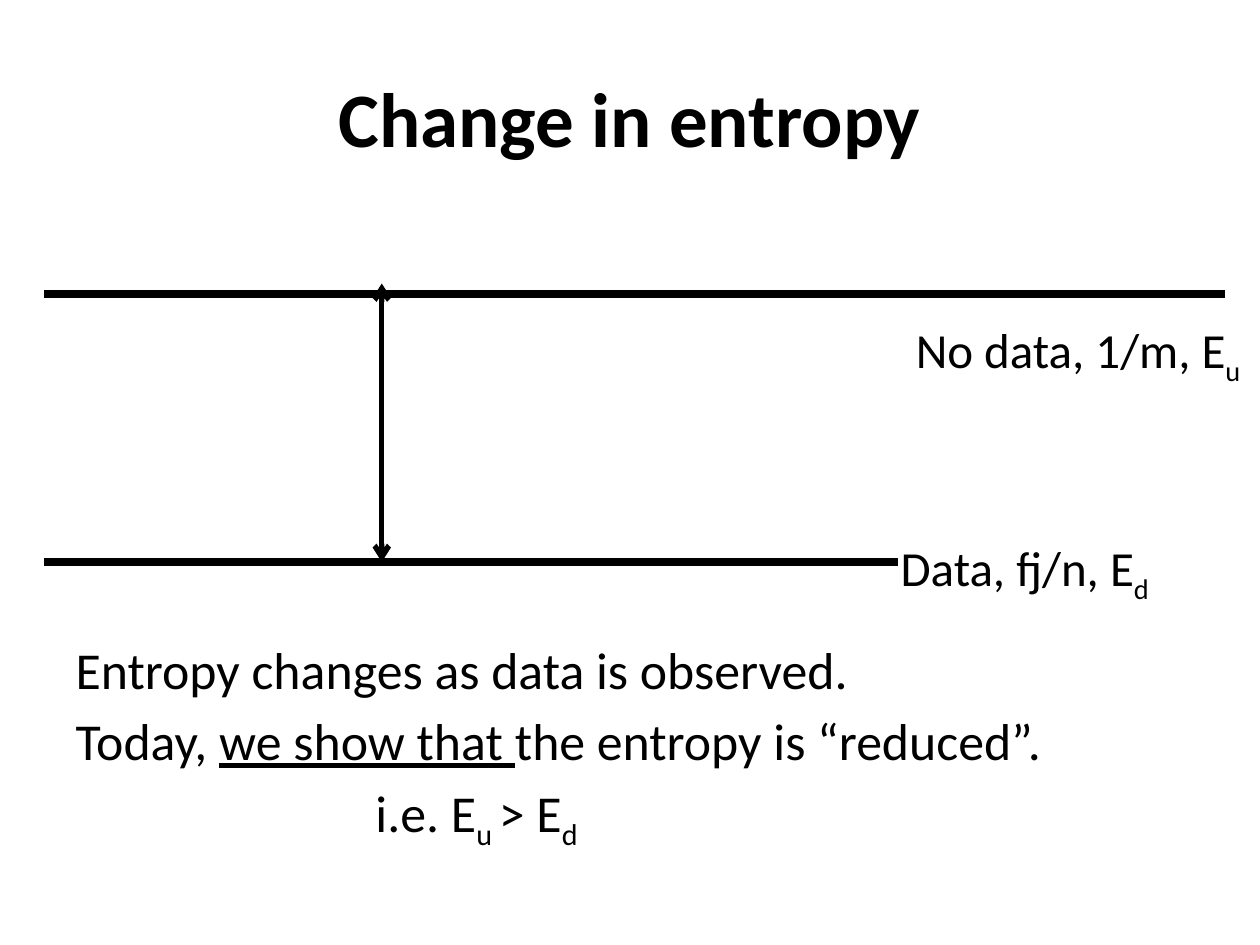
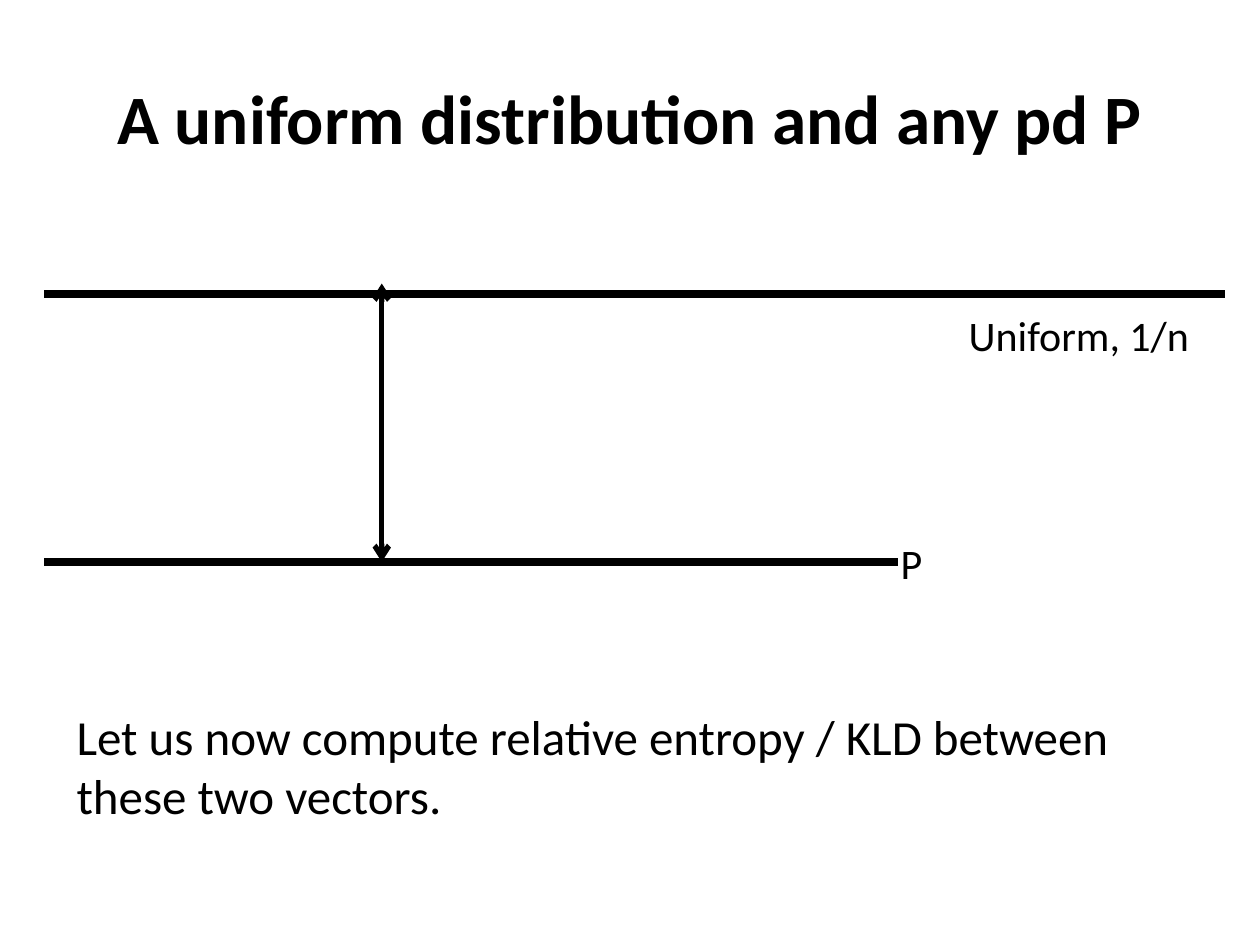
from dataclasses import dataclass

from lxml import etree
from pptx import Presentation
from pptx.dml.color import RGBColor
from pptx.enum.shapes import MSO_CONNECTOR
from pptx.enum.text import MSO_ANCHOR, MSO_AUTO_SIZE, PP_ALIGN
from pptx.oxml.ns import qn
from pptx.util import Inches, Pt

BLACK = RGBColor(0, 0, 0)
FONT = "Calibri"
STRAIGHT = MSO_CONNECTOR.STRAIGHT
CENTER = PP_ALIGN.CENTER
MIDDLE = MSO_ANCHOR.MIDDLE
NO_FIT = MSO_AUTO_SIZE.NONE
GROW = MSO_AUTO_SIZE.SHAPE_TO_FIT_TEXT
TITLE_AND_BODY, TITLE_ONLY = 1, 5


@dataclass(frozen=True)
class Span:
    text: str
    subscript: bool = False
    underline: bool = False


@dataclass(frozen=True)
class Line:
    spans: tuple[Span, ...]
    indent: float = 0


@dataclass(frozen=True)
class Label:
    left: float
    top: float
    width: float
    height: float
    size: float
    lines: tuple[Line, ...]


@dataclass(frozen=True)
class Level:
    x1: float
    y1: float
    x2: float
    y2: float
    weight: float
    arrows: bool = False


ENTROPY_LEVELS = (
    Level(0.35, 2.33, 9.72, 2.33, 4.5),
    Level(0.35, 4.46, 7.13, 4.46, 4.5),
    Level(3.03, 2.25, 3.03, 4.46, 3, arrows=True),
)


def plain(text: str) -> Line:
    return Line((Span(text),))


def place(shape, left: float, top: float, width: float, height: float) -> None:
    shape.left, shape.top = Inches(left), Inches(top)
    shape.width, shape.height = Inches(width), Inches(height)


def style(paragraph, size: float, bold: bool = False) -> None:
    font = paragraph.font
    font.name, font.size, font.bold = FONT, Pt(size), bold
    font.color.rgb = BLACK


def write_lines(frame, lines: tuple[Line, ...], size: float) -> None:
    for index, line in enumerate(lines):
        paragraph = frame.paragraphs[0] if index == 0 else frame.add_paragraph()
        style(paragraph, size)
        for span in line.spans:
            run = paragraph.add_run()
            run.text = span.text
            if span.underline:
                run.font.underline = True
            if span.subscript:
                run.font._element.set("baseline", "-25000")


def add_titled_slide(deck, layout: int, title: str, size: float):
    slide = deck.slides.add_slide(deck.slide_layouts[layout])
    heading = slide.shapes.title
    place(heading, 0.5, 0.3, 9, 1.25)
    frame = heading.text_frame
    frame.text = title
    frame.auto_size, frame.vertical_anchor = NO_FIT, MIDDLE
    frame.paragraphs[0].alignment = CENTER
    style(frame.paragraphs[0], size, bold=True)
    return slide


def fill_body(slide, lines: tuple[Line, ...], size: float) -> None:
    body = slide.placeholders[1]
    place(body, 0.5, 5.01, 9, 1.69)
    frame = body.text_frame
    frame.auto_size = NO_FIT
    write_lines(frame, lines, size)
    for paragraph, line in zip(frame.paragraphs, lines):
        paragraph.space_before = Pt(5.3)
        properties = paragraph._p.get_or_add_pPr()
        properties.set("marL", str(Inches(line.indent)))
        properties.set("indent", "0")
        bullet = etree.Element(qn("a:buNone"))
        properties.find(qn("a:spcBef")).addnext(bullet)


def add_label(slide, label: Label) -> None:
    box = slide.shapes.add_textbox(0, 0, 0, 0)
    place(box, label.left, label.top, label.width, label.height)
    frame = box.text_frame
    frame.word_wrap, frame.auto_size = False, GROW
    write_lines(frame, label.lines, label.size)


def add_level(slide, level: Level) -> None:
    connector = slide.shapes.add_connector(
        STRAIGHT, Inches(level.x1), Inches(level.y1), Inches(level.x2), Inches(level.y2)
    )
    connector.line.color.rgb = BLACK
    connector.line.width = Pt(level.weight)
    properties = connector._element.spPr
    if level.arrows:
        for end in ("a:headEnd", "a:tailEnd"):
            etree.SubElement(properties.find(qn("a:ln")), qn(end), type="arrow")
    etree.SubElement(properties, qn("a:effectLst"))


def add_diagram(slide, labels: tuple[Label, ...]) -> None:
    for level in ENTROPY_LEVELS:
        add_level(slide, level)
    for label in labels:
        add_label(slide, label)


def build_entropy_change(deck) -> None:
    slide = add_titled_slide(deck, TITLE_AND_BODY, "Change in entropy", 44)
    fill_body(slide, (
        plain("Entropy changes as data is observed."),
        Line((
            Span("Today, "),
            Span("we show that ", underline=True),
            Span("the entropy is “reduced”."),
        )),
        Line((
            Span("i.e. E"), Span("u ", subscript=True),
            Span("> E"), Span("d", subscript=True),
        ), indent=2.38),
    ), 29.6)
    no_data = Line((Span("No data, 1/m, E"), Span("u", subscript=True)))
    data = Line((Span("Data, fj/n, E"), Span("d", subscript=True)))
    add_diagram(slide, (
        Label(7.17, 2.49, 2.83, 0.57, 28, (no_data,)),
        Label(7.05, 4.22, 2.21, 0.57, 28, (data,)),
    ))


def build_uniform_distribution(deck) -> None:
    slide = add_titled_slide(deck, TITLE_ONLY, "A uniform distribution and any pd P", 39.6)
    conclusion = (
        plain("Let us now compute relative entropy / KLD between"),
        plain("these two vectors."),
    )
    add_diagram(slide, (
        Label(7.59, 2.41, 1.97, 0.5, 24, (plain("Uniform, 1/n"),)),
        Label(7.05, 4.22, 0.38, 0.5, 24, (plain("P"),)),
        Label(0.51, 5.56, 8.57, 1.04, 28, conclusion),
    ))


def main() -> None:
    deck = Presentation()
    deck.slide_width, deck.slide_height = Inches(10), Inches(7.5)
    build_entropy_change(deck)
    build_uniform_distribution(deck)
    deck.save("out.pptx")


if __name__ == "__main__":
    main()
